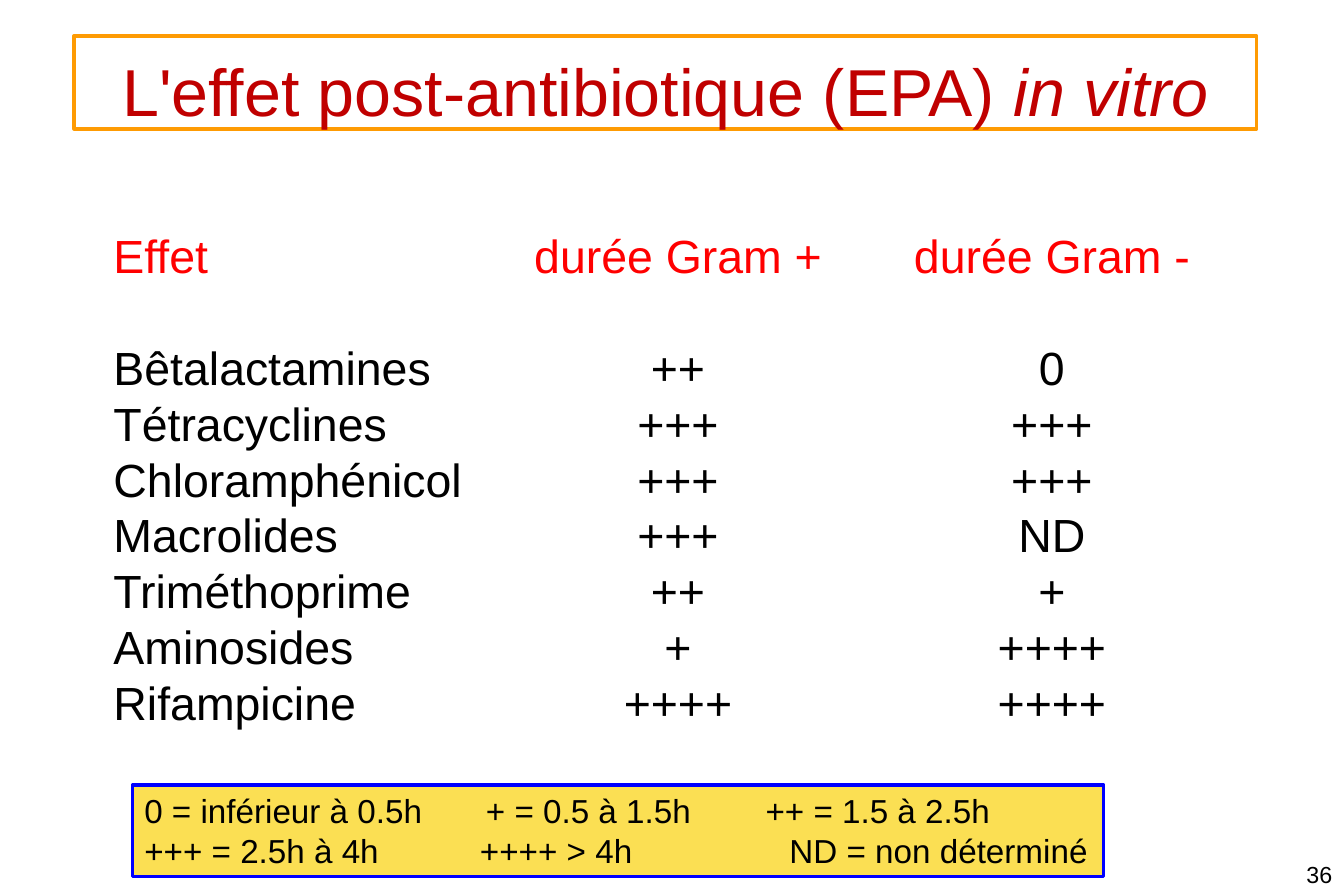
from lxml import etree
from pptx import Presentation
from pptx import util as u
from pptx.dml.color import RGBColor
from pptx.enum import shapes, text
from pptx.oxml.ns import qn

COLUMNS, ROWS = 45, 30
WIDTH, HEIGHT = u.Inches(11.25), u.Inches(7.5)
BLACK, RED, DARK_RED = "000000", "FF0000", "C00000"
ORANGE, YELLOW, BLUE = "FE9B03", "FBDF53", "0000FF"
LEFT, CENTER, RIGHT = text.PP_ALIGN.LEFT, text.PP_ALIGN.CENTER, text.PP_ALIGN.RIGHT

EFFECTS = [
    ("Effet", "durée Gram +", "durée Gram -"),
    ("Bêtalactamines", "++", "0"),
    ("Tétracyclines", "+++", "+++"),
    ("Chloramphénicol", "+++", "+++"),
    ("Macrolides", "+++", "ND"),
    ("Triméthoprime", "++", "+"),
    ("Aminosides", "+", "++++"),
    ("Rifampicine", "++++", "++++"),
]
EFFECT_WIDTHS = (13.04, 12.52, 12.52)
LINE = 1.87

# Each legend line with its own tab stops, in grid columns
LEGEND = [
    ("0 = inférieur à 0.5h\t+ = 0.5 à 1.5h\t++ = 1.5 à 2.5h", (11.44, 20.8)),
    ("+++ = 2.5h à 4h\t++++ > 4h\tND = non déterminé", (11.24, 21.6)),
]


def across(columns):
    return round(WIDTH * columns / COLUMNS)


def down(rows):
    return round(HEIGHT * rows / ROWS)


def place(left, top, width, height):
    return across(left), down(top), across(width), down(height)


def color(value):
    return RGBColor.from_string(value)


def apply(target, **values):
    for name, value in values.items():
        setattr(target, name, value)


def add_span(para, words, size, ink, **style):
    span = para.add_run()
    span.text = words
    apply(span.font, name="Arial", size=u.Pt(size), **style)
    span.font.color.rgb = color(ink)


def add_framed_box(slide, area, border, fill=None):
    box = slide.shapes.add_shape(shapes.MSO_SHAPE.RECTANGLE, *place(*area))
    box.shadow.inherit = False
    if fill:
        box.fill.solid()
        box.fill.fore_color.rgb = color(fill)
    else:
        box.fill.background()
    box.line.color.rgb = color(border)
    box.line.width = u.Pt(2)
    apply(box.text_frame, word_wrap=True, vertical_anchor=text.MSO_ANCHOR.TOP)
    return box.text_frame


def set_tabs(para, stops):
    tabs = etree.SubElement(para._p.get_or_add_pPr(), qn("a:tabLst"))
    for stop in stops:
        etree.SubElement(tabs, qn("a:tab"), pos=str(across(stop)), algn="l")


def add_title(slide):
    para = add_framed_box(slide, (2.48, 1.2, 39.6, 3.12), ORANGE).paragraphs[0]
    apply(para, alignment=CENTER, line_spacing=1.1)
    add_span(para, "L'effet post-antibiotique (EPA) ", 40, DARK_RED)
    add_span(para, "in vitro", 40, DARK_RED, italic=True)


def add_effects(slide):
    """Table whose heading row is two lines tall."""
    area = place(3.4, 7.76, sum(EFFECT_WIDTHS), LINE * (len(EFFECTS) + 1))
    table = slide.shapes.add_table(len(EFFECTS), len(EFFECT_WIDTHS), *area).table
    apply(table, first_row=False, horz_banding=False)
    for column, width in zip(table.columns, EFFECT_WIDTHS):
        column.width = across(width)
    for r, values in enumerate(EFFECTS):
        table.rows[r].height = down(LINE if r else 2 * LINE)
        for c, words in enumerate(values):
            cell = table.cell(r, c)
            cell.fill.background()
            apply(cell, margin_top=0, margin_bottom=0,
                  vertical_anchor=text.MSO_ANCHOR.TOP)
            para = cell.text_frame.paragraphs[0]
            para.alignment = CENTER if c else LEFT
            add_span(para, words, 28, BLACK if r else RED)


def add_legend(slide):
    frame = add_framed_box(slide, (4.44, 26.28, 32.52, 3.08), BLUE, YELLOW)
    frame.margin_right = 0
    frame.add_paragraph()
    for para, (words, stops) in zip(frame.paragraphs, LEGEND):
        para.alignment = LEFT
        set_tabs(para, stops)
        add_span(para, words, 20, BLACK)


def add_page_number(slide, number):
    box = slide.shapes.add_textbox(*place(33.36, 28.6, 11.64, 1.4))
    box.text_frame.word_wrap = True
    para = box.text_frame.paragraphs[0]
    para.alignment = RIGHT
    add_span(para, number, 14, BLACK)


def main():
    deck = Presentation()
    apply(deck, slide_width=WIDTH, slide_height=HEIGHT)
    page = deck.slides.add_slide(deck.slide_layouts[6])
    add_effects(page)
    add_legend(page)
    add_title(page)
    add_page_number(page, "36")
    deck.save("out.pptx")


if __name__ == "__main__":
    main()
